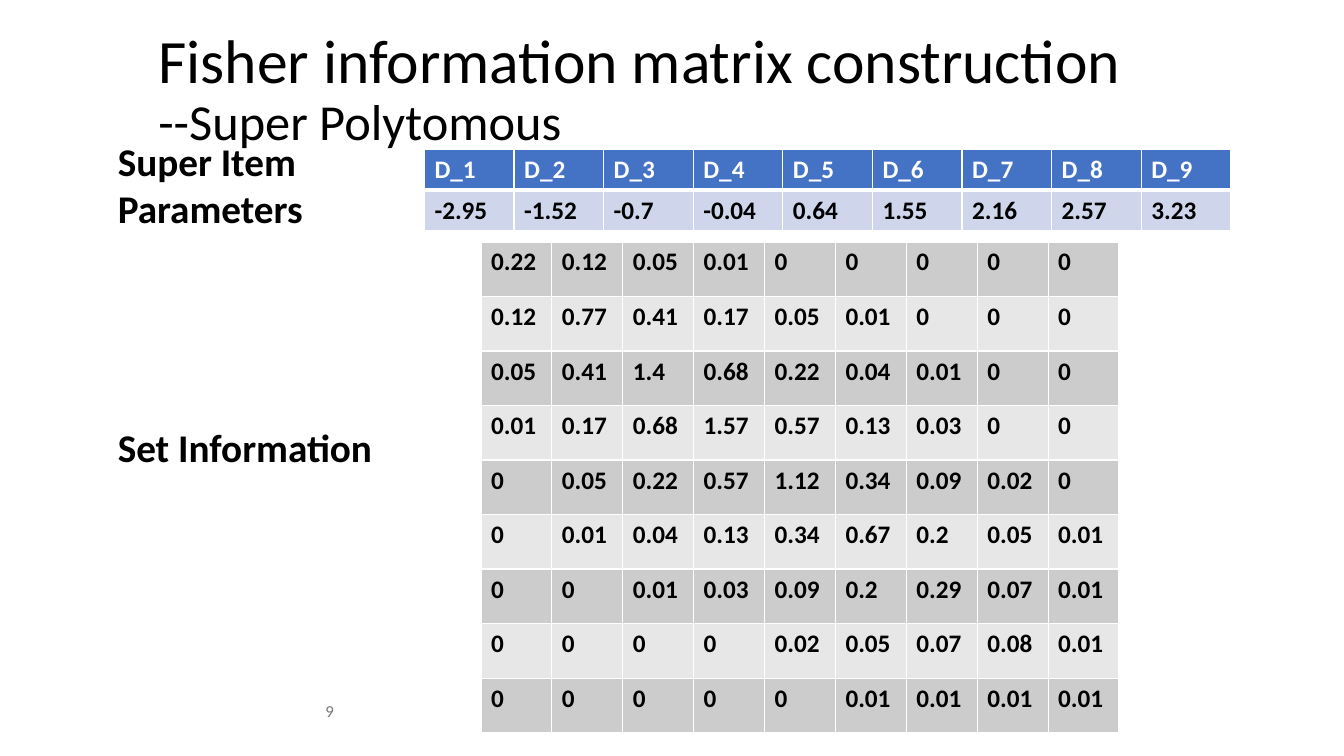
"""Build a slide with super item parameters and their Fisher information matrix."""
from lxml import etree
from pptx import Presentation, util as u
from pptx.dml.color import RGBColor
from pptx.enum import text
from pptx.oxml import ns

TITLE = [("Fisher information matrix construction", 44), ("--Super Polytomous", 36)]
LABELS = ["Super Item Parameters", "Set Information"]
PARAMS = [
    ["D_1", "D_2", "D_3", "D_4", "D_5", "D_6", "D_7", "D_8", "D_9"],
    ["-2.95", "-1.52", "-0.7", "-0.04", "0.64", "1.55", "2.16", "2.57", "3.23"],
]
MATRIX = [
    ["0.22", "0.12", "0.05", "0.01", "0", "0", "0", "0", "0"],
    ["0.12", "0.77", "0.41", "0.17", "0.05", "0.01", "0", "0", "0"],
    ["0.05", "0.41", "1.4", "0.68", "0.22", "0.04", "0.01", "0", "0"],
    ["0.01", "0.17", "0.68", "1.57", "0.57", "0.13", "0.03", "0", "0"],
    ["0", "0.05", "0.22", "0.57", "1.12", "0.34", "0.09", "0.02", "0"],
    ["0", "0.01", "0.04", "0.13", "0.34", "0.67", "0.2", "0.05", "0.01"],
    ["0", "0", "0.01", "0.03", "0.09", "0.2", "0.29", "0.07", "0.01"],
    ["0", "0", "0", "0", "0.02", "0.05", "0.07", "0.08", "0.01"],
    ["0", "0", "0", "0", "0", "0.01", "0.01", "0.01", "0.01"],
]
PAGE = "9"

FONT = "Calibri"
BLACK = RGBColor(0, 0, 0)
WHITE = RGBColor(255, 255, 255)
BLUE = RGBColor(0x44, 0x72, 0xC4)
PALE = RGBColor(0xCF, 0xD5, 0xEA)
DARK = RGBColor(0xCC, 0xCC, 0xCC)
LIGHT = RGBColor(0xE7, 0xE7, 0xE7)
GREY = RGBColor(0x79, 0x79, 0x79)


def add_run(para, words, size, color=BLACK, bold=False):
    run = para.add_run()
    run.text = words
    font = run.font
    font.name, font.size, font.bold = FONT, u.Pt(size), bold
    font.color.rgb = color


def add_box(slide, left, top, width, height):
    area = [u.Inches(n) for n in (left, top, width, height)]
    frame = slide.shapes.add_textbox(*area).text_frame
    frame.word_wrap = True
    return frame


def set_edge(cell, side, width):
    props = cell._tc.get_or_add_tcPr()
    line = etree.SubElement(props, ns.qn("a:ln" + side), w=str(u.Pt(width)))
    fill = etree.SubElement(line, ns.qn("a:solidFill"))
    etree.SubElement(fill, ns.qn("a:srgbClr"), val=str(WHITE))


def add_grid(slide, rows, left, top, width, height, fills, head=False):
    area = [u.Inches(n) for n in (left, top, width, height)]
    table = slide.shapes.add_table(len(rows), len(rows[0]), *area).table
    table.first_row = head
    table.horz_banding = False
    for r, row in enumerate(rows):
        first = head and r == 0
        for c, value in enumerate(row):
            cell = table.cell(r, c)
            for side in "LRTB":
                set_edge(cell, side, 3 if first and side == "B" else 1)
            cell.fill.solid()
            cell.fill.fore_color.rgb = fills[r % 2]
            add_run(cell.text_frame.paragraphs[0], value, 18,
                    WHITE if first else BLACK, True)


def main():
    deck = Presentation()
    deck.slide_width, deck.slide_height = u.Inches(13.33), u.Inches(7.5)
    slide = deck.slides.add_slide(deck.slide_layouts[5])

    title = slide.shapes.title
    title.left, title.top = u.Inches(1.47), u.Inches(0.25)
    title.width, title.height = u.Inches(11.14), u.Inches(1.13)
    frame = title.text_frame
    frame.auto_size = text.MSO_AUTO_SIZE.NONE
    frame.vertical_anchor = text.MSO_ANCHOR.TOP
    para = frame.paragraphs[0]
    para.alignment = text.PP_ALIGN.LEFT
    para.line_spacing = 0.9
    for i, (words, size) in enumerate(TITLE):
        if i:
            para.add_line_break()
        add_run(para, words, size)

    frame = add_box(slide, 1.07, 1.31, 3.13, 3.4)
    for i, words in enumerate(LABELS):
        para = frame.add_paragraph() if i else frame.paragraphs[0]
        if i:
            para.space_before = u.Pt(137)
        add_run(para, words, 28, bold=True)

    add_grid(slide, PARAMS, 4.21, 1.48, 8, 0.81, (BLUE, PALE), head=True)
    add_grid(slide, MATRIX, 4.77, 2.4, 6.33, 4.87, (DARK, LIGHT))

    frame = add_box(slide, 0.41, 6.85, 3, 0.4)
    frame.vertical_anchor = text.MSO_ANCHOR.MIDDLE
    para = frame.paragraphs[0]
    para.alignment = text.PP_ALIGN.RIGHT
    add_run(para, PAGE, 12, GREY)

    deck.save("out.pptx")


if __name__ == "__main__":
    main()
